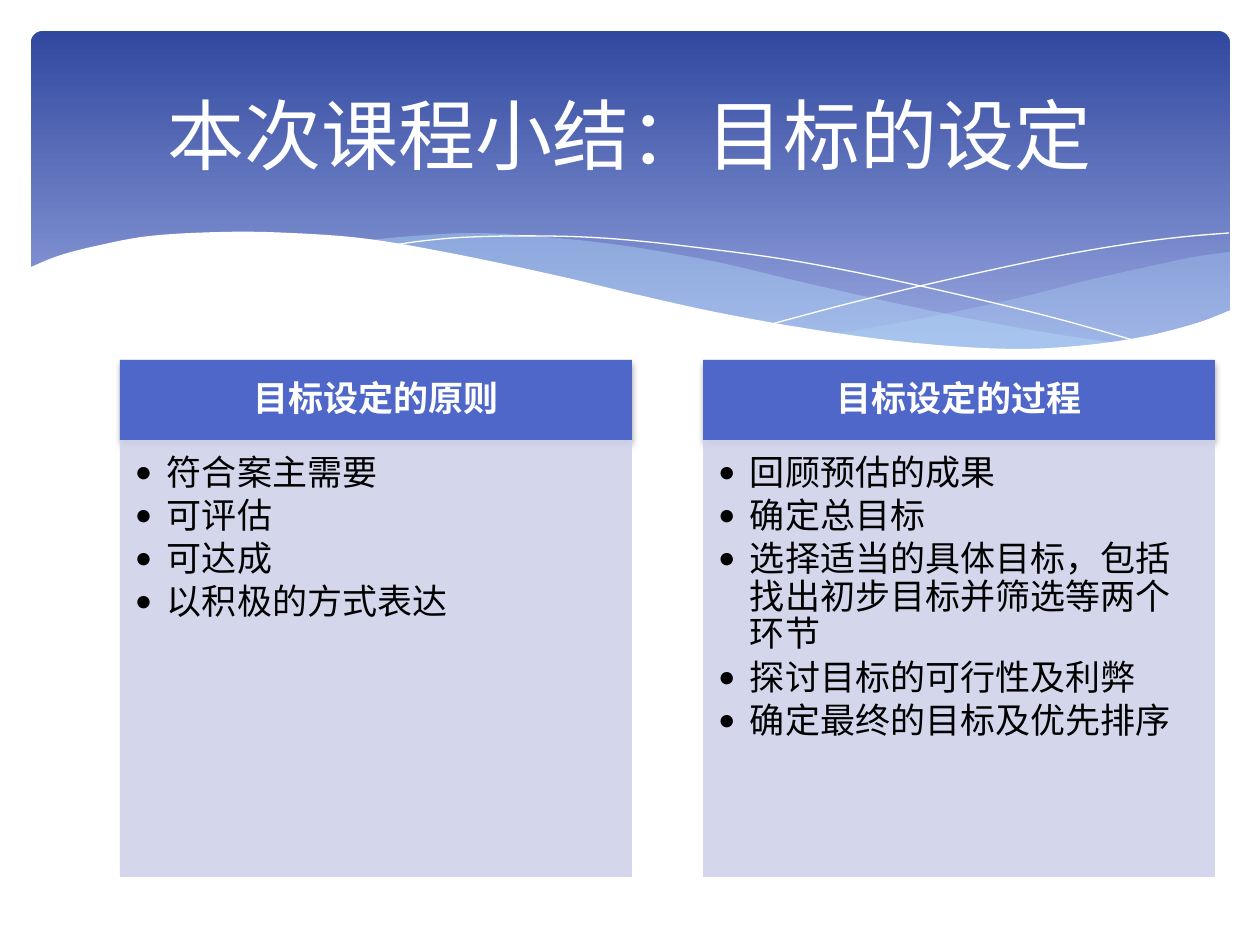
from dataclasses import dataclass

from lxml.etree import SubElement
from pptx import Presentation
from pptx.dml.color import RGBColor
from pptx.enum.shapes import MSO_SHAPE
from pptx.enum.text import MSO_ANCHOR, MSO_AUTO_SIZE, PP_ALIGN
from pptx.oxml.ns import qn
from pptx.util import Emu, Pt

EMU_PER_PX = 914400 / 126
COLORS = {
    "white": "FFFFFF",
    "black": "000000",
    "banner_top": "31489F",
    "banner_bottom": "95A4DE",
    "wave": "B4DCFA",
    "header": "4E67C8",
    "panel": "D0D3EB",
}
FONT = "Calibri"
Points = list[tuple[int, int]]


@dataclass
class Wave:
    curves: list[Points]
    color: str = "wave"
    opacity: int = 100


@dataclass
class Panel:
    left: int
    header: str
    items: list[str]


@dataclass
class TextStyle:
    size: int
    color: str
    bold: bool = False
    align: PP_ALIGN = PP_ALIGN.LEFT
    anchor: MSO_ANCHOR = MSO_ANCHOR.MIDDLE
    insets: tuple[int, int, int, int] = (13, 6, 13, 6)
    line_spacing: float = 0.9
    space_after: int = 0
    indent: int = 0


WAVES = [
    Wave([[(1230, 252), (1194, 257), (1142, 268), (1085, 281), (1014, 299),
           (919, 319), (833, 334)],
          [(833, 334), (888, 341), (954, 348), (1012, 350), (1076, 348),
           (1140, 339), (1187, 326), (1230, 311)]], opacity=29),
    Wave([[(1125, 344), (1055, 334), (977, 320), (890, 302), (793, 280), (717, 262),
           (633, 247), (557, 238), (479, 233), (413, 236), (360, 241)],
          [(360, 241), (431, 251), (509, 266), (566, 280), (668, 302), (757, 321),
           (838, 335), (927, 347), (1003, 350), (1068, 349), (1125, 344)]], opacity=40),
]
WAVE_LINES = [
    [(389, 246), (422, 241), (471, 237), (546, 236), (616, 239), (701, 248),
     (801, 262), (916, 285), (1047, 316), (1143, 343)],
    [(772, 324), (847, 304), (942, 281), (1053, 257), (1128, 244), (1182, 237),
     (1229, 233)],
]
BANNER_CUT = Wave(
    [[(1231, 310), (1197, 323), (1147, 336), (1087, 345), (1019, 349), (937, 345),
      (842, 334), (730, 315), (634, 294), (563, 277), (460, 255), (368, 239),
      (290, 233), (223, 232), (150, 236), (96, 246), (58, 256), (29, 268)],
     [(29, 415), (1231, 415)]], "white")

TITLE = "本次课程小结：目标的设定"
PANELS = [
    Panel(120, "目标设定的原则", ["符合案主需要", "可评估", "可达成", "以积极的方式表达"]),
    Panel(703, "目标设定的过程", [
        "回顾预估的成果", "确定总目标", "选择适当的具体目标，包括找出初步目标并筛选等两个环节",
        "探讨目标的可行性及利弊", "确定最终的目标及优先排序"]),
]
PANEL_TOP, PANEL_WIDTH, HEADER_HEIGHT, BODY_HEIGHT = 360, 512, 80, 437

TITLE_STYLE = TextStyle(44, "white", align=PP_ALIGN.CENTER, line_spacing=1.0)
HEADER_STYLE = TextStyle(20, "white", bold=True, align=PP_ALIGN.CENTER, insets=(20, 11, 20, 11))
LIST_STYLE = TextStyle(20, "black", anchor=MSO_ANCHOR.TOP, insets=(15, 15, 20, 21),
                       space_after=3, indent=32)


def px(length: float) -> Emu:
    return Emu(round(length * EMU_PER_PX))


def rgb(name: str) -> RGBColor:
    return RGBColor.from_string(COLORS[name])


def set_attributes(target, values: dict) -> None:
    for name, value in values.items():
        setattr(target, name, value)


def fill_shape(shape, color: str, opacity: int = 100) -> None:
    shape.fill.solid()
    shape.fill.fore_color.rgb = rgb(color)
    if opacity < 100:
        color_node = shape.fill._xPr.find(qn("a:solidFill"))[0]
        SubElement(color_node, qn("a:alpha"), val=str(opacity * 1000))


def smooth_curve(points: Points, steps: int = 6) -> list[tuple[float, float]]:
    """Sample a Catmull-Rom curve through the points."""
    padded = [points[0], *points, points[-1]]
    samples = []
    for a, b, c, d in zip(padded, padded[1:], padded[2:], padded[3:]):
        for step in range(steps):
            t = step / steps
            samples.append(tuple(
                b[i] + t * (c[i] - a[i]) / 2
                + t**2 * (2 * a[i] - 5 * b[i] + 4 * c[i] - d[i]) / 2
                + t**3 * (3 * b[i] - a[i] - 3 * c[i] + d[i]) / 2
                for i in (0, 1)))
    return [*samples, points[-1]]


def draw_outline(slide, curves: list[Points], close: bool):
    vertices = [(px(x), px(y)) for curve in curves for x, y in smooth_curve(curve)]
    builder = slide.shapes.build_freeform(*vertices[0])
    builder.add_line_segments(vertices[1:], close=close)
    shape = builder.convert_to_shape()
    shape.shadow.inherit = False
    return shape


def draw_wave(slide, wave: Wave) -> None:
    shape = draw_outline(slide, wave.curves, close=True)
    fill_shape(shape, wave.color, wave.opacity)
    shape.line.fill.background()


def draw_wave_line(slide, points: Points) -> None:
    shape = draw_outline(slide, [points], close=False)
    shape.fill.background()
    shape.line.color.rgb = rgb("white")
    shape.line.width = Pt(0)


def draw_banner(slide) -> None:
    banner = slide.shapes.add_shape(
        MSO_SHAPE.ROUNDED_RECTANGLE, px(31), px(31), px(1199), px(340))
    banner.adjustments[0] = 0.034
    banner.shadow.inherit = False
    banner.line.fill.background()
    banner.fill.gradient()
    banner.fill.gradient_angle = 270
    stops = zip(banner.fill.gradient_stops, ("banner_top", "banner_bottom"), (0, 0.9))
    for stop, color, position in stops:
        stop.color.rgb = rgb(color)
        stop.position = position


def add_drop_shadow(shape) -> None:
    shape.shadow.inherit = False
    effects = shape._element.spPr.find(qn("a:effectLst"))
    shadow = SubElement(effects, qn("a:outerShdw"), blurRad=str(Pt(4)), dist=str(Pt(2)),
                        dir="5400000", rotWithShape="0")
    color = SubElement(shadow, qn("a:srgbClr"), val=COLORS["black"])
    SubElement(color, qn("a:alpha"), val="38000")


def place_text(slide, placeholder, box: tuple[int, int, int, int], lines: list[str],
               style: TextStyle) -> None:
    """Move a placeholder to the front, then fill and format it."""
    slide.shapes._spTree.append(placeholder._element)
    set_attributes(placeholder, dict(zip(("left", "top", "width", "height"), map(px, box))))
    frame = placeholder.text_frame
    frame.text = "\n".join(lines)
    sides = ("margin_left", "margin_top", "margin_right", "margin_bottom")
    set_attributes(frame, dict(zip(sides, map(px, style.insets))) | {
        "word_wrap": True, "auto_size": MSO_AUTO_SIZE.NONE, "vertical_anchor": style.anchor})
    for paragraph in frame.paragraphs:
        set_attributes(paragraph, {
            "alignment": style.align, "line_spacing": style.line_spacing,
            "space_before": Pt(0), "space_after": Pt(style.space_after)})
        if style.indent:
            properties = paragraph._p.get_or_add_pPr()
            properties.set("marL", str(px(style.indent)))
            properties.set("indent", str(-px(style.indent)))
            SubElement(properties, qn("a:buFont"), typeface=FONT)
            SubElement(properties, qn("a:buChar"), char="•")
        font = paragraph.runs[0].font
        set_attributes(font, {"name": FONT, "size": Pt(style.size), "bold": style.bold})
        font.color.rgb = rgb(style.color)


def draw_panel(slide, panel: Panel, header, body) -> None:
    place_text(slide, header, (panel.left, PANEL_TOP, PANEL_WIDTH, HEADER_HEIGHT),
               [panel.header], HEADER_STYLE)
    fill_shape(header, "header")
    add_drop_shadow(header)
    place_text(slide, body, (panel.left, PANEL_TOP + HEADER_HEIGHT, PANEL_WIDTH, BODY_HEIGHT),
               panel.items, LIST_STYLE)
    fill_shape(body, "panel", 90)


def main() -> None:
    presentation = Presentation()
    set_attributes(presentation, {"slide_width": px(1260), "slide_height": px(945)})
    comparison_layout = presentation.slide_layouts[4]
    slide = presentation.slides.add_slide(comparison_layout)
    title, *panel_placeholders = slide.placeholders

    draw_banner(slide)
    for wave in WAVES:
        draw_wave(slide, wave)
    for points in WAVE_LINES:
        draw_wave_line(slide, points)
    draw_wave(slide, BANNER_CUT)
    for panel, header, body in zip(PANELS, panel_placeholders[::2], panel_placeholders[1::2]):
        draw_panel(slide, panel, header, body)
    place_text(slide, title, (63, 47, 1134, 173), [TITLE], TITLE_STYLE)
    presentation.save("out.pptx")


if __name__ == "__main__":
    main()
